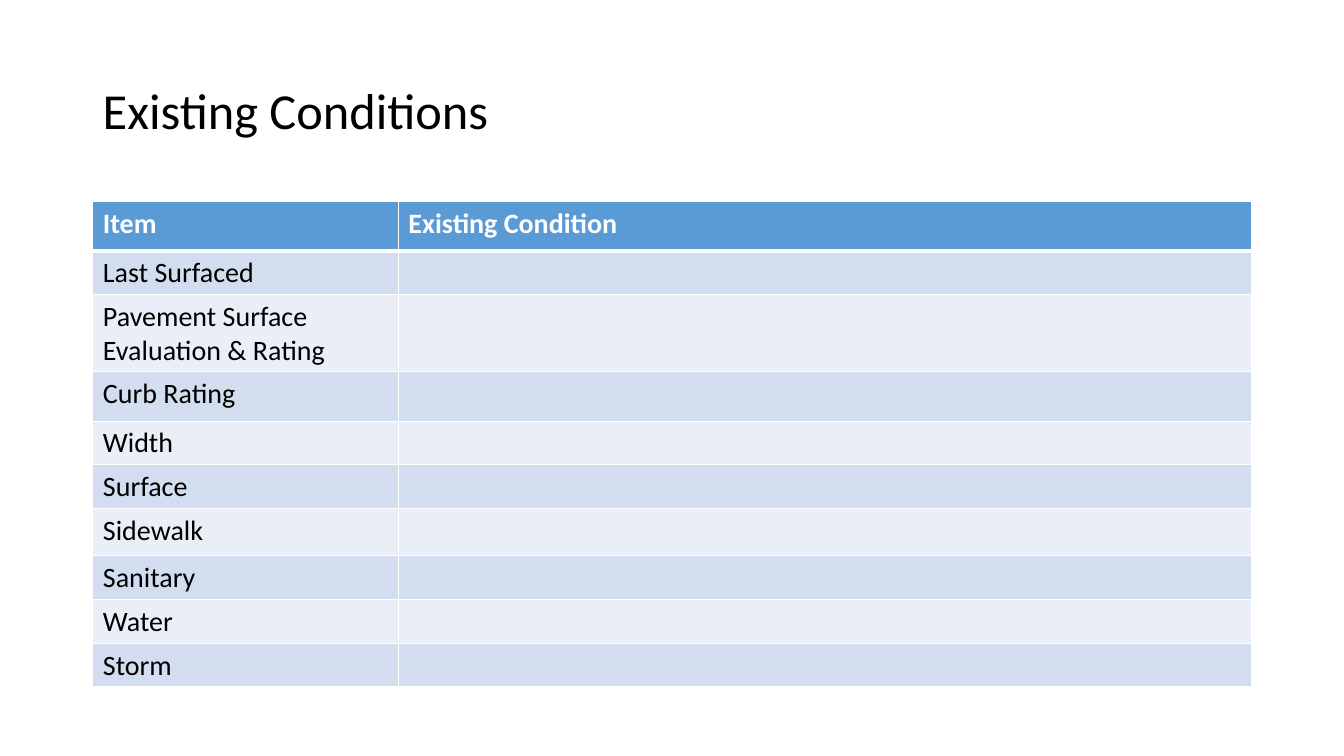
from lxml import etree
from pptx import Presentation
from pptx.dml.color import RGBColor
from pptx.enum import text
from pptx.oxml.ns import qn
from pptx.util import Cm, Pt

# Content
TITLE = "Existing Conditions"
HEADER = ("Item", "Existing Condition")
# Item and row height in cm
ITEMS = [
    ("Last Surfaced", 1.09),
    ("Pavement Surface Evaluation & Rating", 1.73),
    ("Curb Rating", 1.24),
    ("Width", 1.09),
    ("Surface", 1.09),
    ("Sidewalk", 1.19),
    ("Sanitary", 1.09),
    ("Water", 0.99),
    ("Storm", 1.09),
]
HEADER_HEIGHT = 1.24
COLUMN_WIDTHS = (7.7, 21.51)
LEFT = 2.34
TABLE_TOP = 5.08


class Theme:
    font = "Calibri"
    title_size = 36
    table_size = 20
    ink = "000000"
    white = "FFFFFF"
    header = "5B9BD5"
    bands = ("D2DEEF", "EAEFF7")
    thin = 1
    thick = 3


def add_span(para, words, size, color, bold=False):
    span = para.add_run()
    span.text = words
    span.font.name = Theme.font
    span.font.size = Pt(size)
    span.font.bold = bold
    span.font.color.rgb = RGBColor.from_string(color)


def add_borders(cell, top, bottom):
    properties = cell._tc.get_or_add_tcPr()
    widths = {"lnL": Theme.thin, "lnR": Theme.thin, "lnT": top, "lnB": bottom}
    for side, width in widths.items():
        line = etree.SubElement(properties, qn("a:" + side), w=str(Pt(width)))
        fill = etree.SubElement(line, qn("a:solidFill"))
        etree.SubElement(fill, qn("a:srgbClr"), val=Theme.white)


def add_title(page):
    box = page.shapes.add_textbox(Cm(LEFT), Cm(1.01), Cm(sum(COLUMN_WIDTHS)), Cm(3.68))
    frame = box.text_frame
    frame.word_wrap = True
    frame.vertical_anchor = text.MSO_ANCHOR.MIDDLE
    para = frame.paragraphs[0]
    para.line_spacing = 0.9
    add_span(para, TITLE, Theme.title_size, Theme.ink)


def add_conditions_table(page):
    rows = [HEADER] + [(item, "") for item, _ in ITEMS]
    heights = [HEADER_HEIGHT] + [height for _, height in ITEMS]
    table = page.shapes.add_table(
        len(rows), len(HEADER), Cm(LEFT), Cm(TABLE_TOP),
        Cm(sum(COLUMN_WIDTHS)), Cm(sum(heights))).table
    for column, width in zip(table.columns, COLUMN_WIDTHS):
        column.width = Cm(width)

    for index, (row, height) in enumerate(zip(rows, heights)):
        table.rows[index].height = Cm(height)
        is_header = index == 0
        background = Theme.header if is_header else Theme.bands[(index - 1) % 2]
        color = Theme.white if is_header else Theme.ink
        for cell, words in zip(table.rows[index].cells, row):
            # The thick rule lies between the header and the first item
            add_borders(cell,
                        top=Theme.thick if index == 1 else Theme.thin,
                        bottom=Theme.thick if is_header else Theme.thin)
            cell.fill.solid()
            cell.fill.fore_color.rgb = RGBColor.from_string(background)
            para = cell.text_frame.paragraphs[0]
            if words:
                add_span(para, words, Theme.table_size, color, bold=is_header)
            else:
                para.font.size = Pt(Theme.table_size)


def main():
    deck = Presentation()
    deck.slide_width, deck.slide_height = Cm(33.87), Cm(19.05)
    page = deck.slides.add_slide(deck.slide_layouts[6])
    add_title(page)
    add_conditions_table(page)
    deck.save("out.pptx")


if __name__ == "__main__":
    main()
